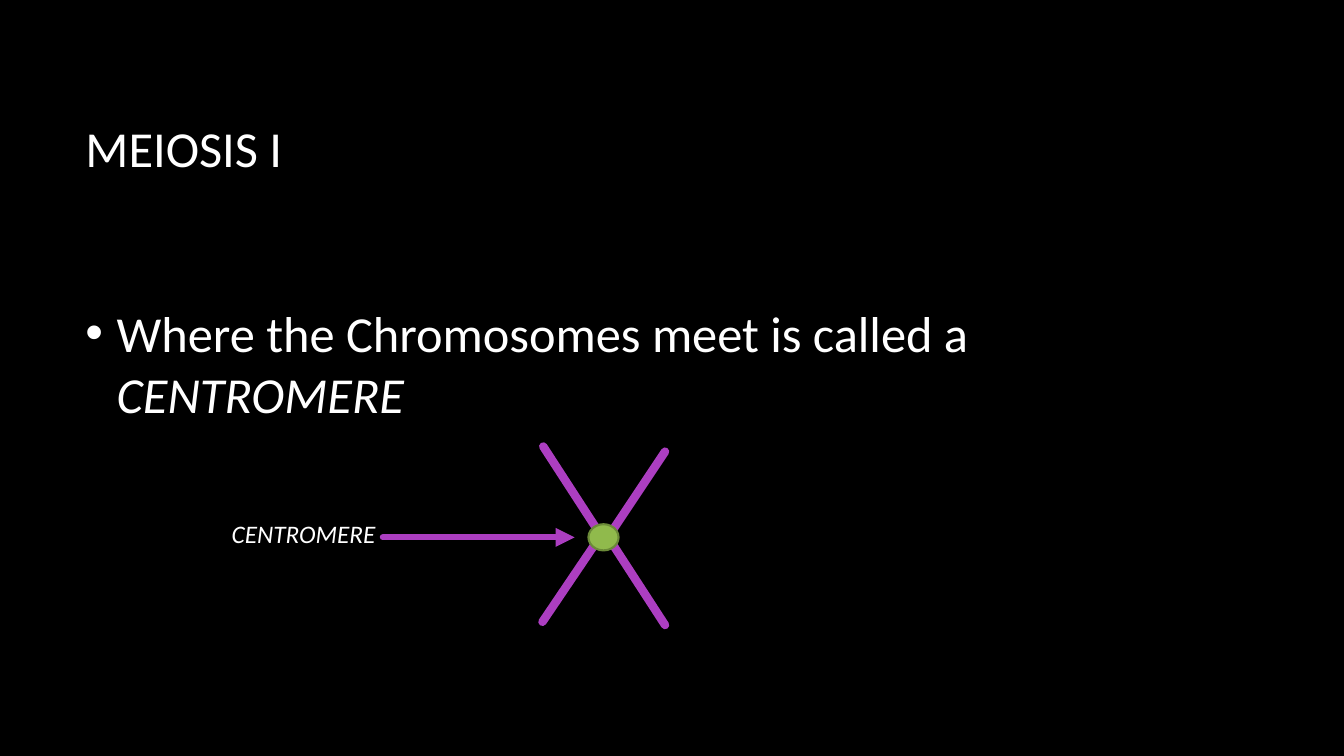
from dataclasses import dataclass

from lxml.etree import SubElement
from pptx import Presentation
from pptx.dml.color import RGBColor
from pptx.enum.shapes import MSO_CONNECTOR, MSO_SHAPE
from pptx.enum.text import MSO_ANCHOR, MSO_AUTO_SIZE, PP_ALIGN
from pptx.oxml.ns import qn
from pptx.util import Cm, Pt


@dataclass(frozen=True)
class Theme:
    font: str = "Calibri"
    background: RGBColor = RGBColor(0x00, 0x00, 0x00)
    text: RGBColor = RGBColor(0xFF, 0xFF, 0xFF)
    chromosome: RGBColor = RGBColor(0xAC, 0x3E, 0xC1)
    centromere: RGBColor = RGBColor(0x90, 0xBA, 0x4C)
    centromere_edge: RGBColor = RGBColor(0x6B, 0x8A, 0x38)
    large: Pt = Pt(36)
    small: Pt = Pt(18)
    arm_width: Pt = Pt(6)
    arrow_width: Pt = Pt(4.5)
    edge_width: Pt = Pt(1.5)


THEME = Theme()

TITLE_BOX = (1.9, 1.7, 28.15, 4.04)
BODY_BOX = (1.9, 5.94, 28.15, 6.4)
LABEL_BOX = (5.59, 12.93, 4.85, 1.02)
CENTROMERE_BOX = (14.83, 13.21, 0.76, 0.66)
ARROW = (9.65, 13.54, 14.48, 13.54)
CHROMOSOME_ARMS = [
    (13.69, 11.25, 15.11, 13.44),
    (15.34, 13.56, 16.76, 15.75),
    (15.11, 13.54, 13.67, 15.67),
    (16.76, 11.38, 15.32, 13.54),
]


def lengths(values):
    return [Cm(value) for value in values]


def set_attributes(target, values):
    for name, value in values.items():
        setattr(target, name, value)


def write_text(shape, runs, size, anchor=MSO_ANCHOR.MIDDLE):
    """Fill the shape with one paragraph of (text, italic) runs."""
    frame = shape.text_frame
    set_attributes(frame, {
        "word_wrap": True,
        "auto_size": MSO_AUTO_SIZE.NONE,
        "vertical_anchor": anchor,
    })
    paragraph = frame.paragraphs[0]
    paragraph.alignment = PP_ALIGN.LEFT
    for text, italic in runs:
        run = paragraph.add_run()
        run.text = text
        set_attributes(run.font, {"name": THEME.font, "size": size, "italic": italic})
        run.font.color.rgb = THEME.text
    return paragraph


def add_title(slide, text):
    title = slide.shapes.title
    left, top, width, height = lengths(TITLE_BOX)
    set_attributes(title, {"left": left, "top": top, "width": width, "height": height})
    write_text(title, [(text, False)], THEME.large)


def add_text(slide, box, runs, size, anchor):
    text_box = slide.shapes.add_textbox(*lengths(box))
    return write_text(text_box, runs, size, anchor)


def add_bullet(paragraph):
    paragraph.space_after = Pt(10)
    properties = paragraph._p.get_or_add_pPr()
    properties.set("marL", str(Cm(0.79)))
    properties.set("indent", str(Cm(-0.79)))
    colour = SubElement(properties, qn("a:buClr"))
    SubElement(colour, qn("a:srgbClr"), val=str(THEME.text))
    SubElement(properties, qn("a:buFont"), typeface="Arial")
    SubElement(properties, qn("a:buChar"), char="•")


def add_line(slide, ends, width, arrowhead=False):
    connector = slide.shapes.add_connector(MSO_CONNECTOR.STRAIGHT, *lengths(ends))
    connector.line.width = width
    connector.line.color.rgb = THEME.chromosome
    line = connector.line._get_or_add_ln()
    line.set("cap", "rnd")
    SubElement(line, qn("a:round"))
    if arrowhead:
        SubElement(line, qn("a:tailEnd"), type="triangle")
    SubElement(connector._element.spPr, qn("a:effectLst"))


def add_centromere(slide):
    centromere = slide.shapes.add_shape(MSO_SHAPE.OVAL, *lengths(CENTROMERE_BOX))
    centromere.shadow.inherit = False
    centromere.fill.solid()
    centromere.fill.fore_color.rgb = THEME.centromere
    centromere.line.color.rgb = THEME.centromere_edge
    centromere.line.width = THEME.edge_width


def main():
    presentation = Presentation()
    set_attributes(presentation, {"slide_width": Cm(33.87), "slide_height": Cm(19.05)})
    slide = presentation.slides.add_slide(presentation.slide_layouts.get_by_name("Title Only"))
    slide.background.fill.solid()
    slide.background.fill.fore_color.rgb = THEME.background

    add_title(slide, "MEIOSIS I")
    definition = [("Where the Chromosomes meet is called a ", False), ("CENTROMERE", True)]
    add_bullet(add_text(slide, BODY_BOX, definition, THEME.large, MSO_ANCHOR.MIDDLE))

    for arm in CHROMOSOME_ARMS:
        add_line(slide, arm, THEME.arm_width)
    add_text(slide, LABEL_BOX, [("CENTROMERE", True)], THEME.small, MSO_ANCHOR.TOP)
    add_line(slide, ARROW, THEME.arrow_width, arrowhead=True)
    add_centromere(slide)

    presentation.save("out.pptx")


if __name__ == "__main__":
    main()
